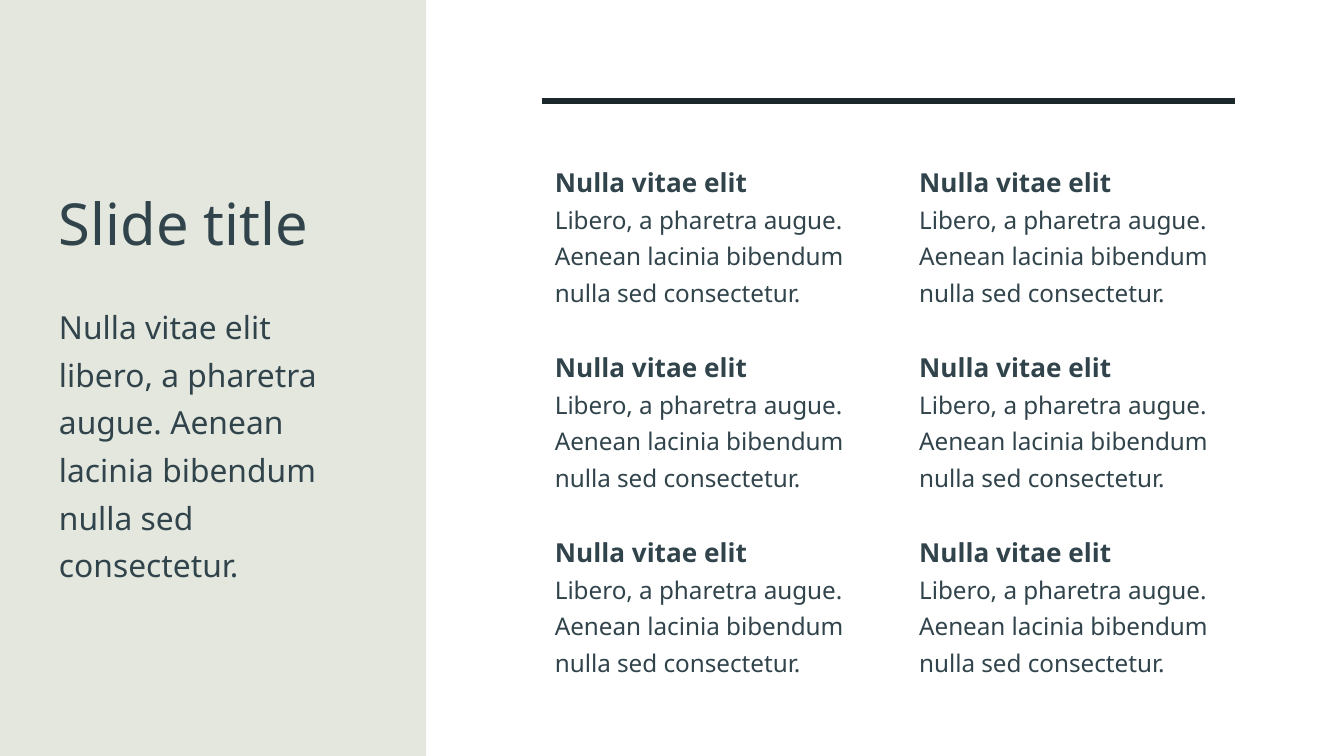
import pptx
import pptx.util
import pptx.dml.color
import pptx.enum.shapes
import pptx.enum.text
import lxml.etree
from pptx.oxml.ns import qn

# Content
TITLE = "Slide title"
SUBTITLE = ("Nulla vitae elit libero, a pharetra augue. "
            "Aenean lacinia bibendum nulla sed consectetur.")
ENTRY = ("Nulla vitae elit", "Libero, a pharetra augue. "
         "Aenean lacinia bibendum nulla sed consectetur.")
COLUMNS = [[ENTRY] * 3, [ENTRY] * 3]

# Style: (font, size, bold)
COLORS = {"panel": "E4E7DE", "text": "31444B", "rule": "1B282B"}
TITLE_STYLE = ("Noto Sans", 31, False)
SUBTITLE_STYLE = ("Noto Sans", 17, False)
HEADING_STYLE = ("Open Sans", 14, True)
BODY_STYLE = ("Noto Sans", 13, False)
LINE_SPACING = 1.25
ENTRY_GAP = 19.6

# Layout in inches, on a 16:9 slide
WIDTH = 10
HEIGHT = WIDTH * 9 / 16
BLEED = 0.02
PANEL_RIGHT = 3.17
SIDE_LEFT = 0.34
GRID_LEFT, GRID_TOP, GRID_HEIGHT = 4.03, 1.08, 4.1
COLUMN_WIDTH, COLUMN_GAP = 2.45, 0.26
GRID_RIGHT = GRID_LEFT + len(COLUMNS) * (COLUMN_WIDTH + COLUMN_GAP) - COLUMN_GAP
RULE_TOP = 0.75

inches = pptx.util.Inches


def color(name):
    return pptx.dml.color.RGBColor.from_string(COLORS[name])


def add_text(page, left, top, width, height, lines, spacing=None, anchor="TOP"):
    """Add a box of (text, style, space before) lines."""
    box = page.shapes.add_textbox(*map(inches, (left, top, width, height)))
    frame = box.text_frame
    frame.word_wrap = True
    frame.vertical_anchor = getattr(pptx.enum.text.MSO_ANCHOR, anchor)
    frame.margin_left = frame.margin_right = inches(0.1)
    frame.margin_top = frame.margin_bottom = inches(0.1)
    frame.text = "\n".join(text for text, _, _ in lines)
    for para, (_, (font, size, bold), gap) in zip(frame.paragraphs, lines):
        para.line_spacing = spacing
        para.space_before = pptx.util.Pt(gap)
        for span in para.runs:
            span.font.name = font
            span.font.size = pptx.util.Pt(size)
            span.font.bold = bold
            span.font.color.rgb = color("text")


deck = pptx.Presentation()
deck.slide_width, deck.slide_height = inches(WIDTH), inches(HEIGHT)
page = deck.slides.add_slide(deck.slide_layouts[6])

# Side panel
panel = page.shapes.add_shape(
    pptx.enum.shapes.MSO_SHAPE.RECTANGLE, inches(-BLEED), inches(-BLEED / 2),
    inches(PANEL_RIGHT + BLEED), inches(HEIGHT + BLEED))
panel.shadow.inherit = False
panel.fill.solid()
panel.fill.fore_color.rgb = color("panel")
panel.line.fill.background()

# Title and subtitle
add_text(page, SIDE_LEFT, 1.34, COLUMN_WIDTH, 0.67,
         [(TITLE, TITLE_STYLE, 0)], anchor="BOTTOM")
add_text(page, SIDE_LEFT, 2.12, COLUMN_WIDTH, 2.94,
         [(SUBTITLE, SUBTITLE_STYLE, 0)], LINE_SPACING)

# Rule above the columns
rule = page.shapes.add_connector(
    pptx.enum.shapes.MSO_CONNECTOR.STRAIGHT,
    *map(inches, (GRID_LEFT, RULE_TOP, GRID_RIGHT, RULE_TOP)))
rule.line.color.rgb = color("rule")
rule.line.width = pptx.util.Pt(3)
lxml.etree.SubElement(rule._element.spPr, qn("a:effectLst"))

# Text columns
for column, entries in enumerate(COLUMNS):
    lines = []
    for row, (heading, body) in enumerate(entries):
        lines += [(heading, HEADING_STYLE, ENTRY_GAP if row else 0),
                  (body, BODY_STYLE, 0)]
    add_text(page, GRID_LEFT + column * (COLUMN_WIDTH + COLUMN_GAP), GRID_TOP,
             COLUMN_WIDTH, GRID_HEIGHT, lines, LINE_SPACING)

deck.save("out.pptx")
